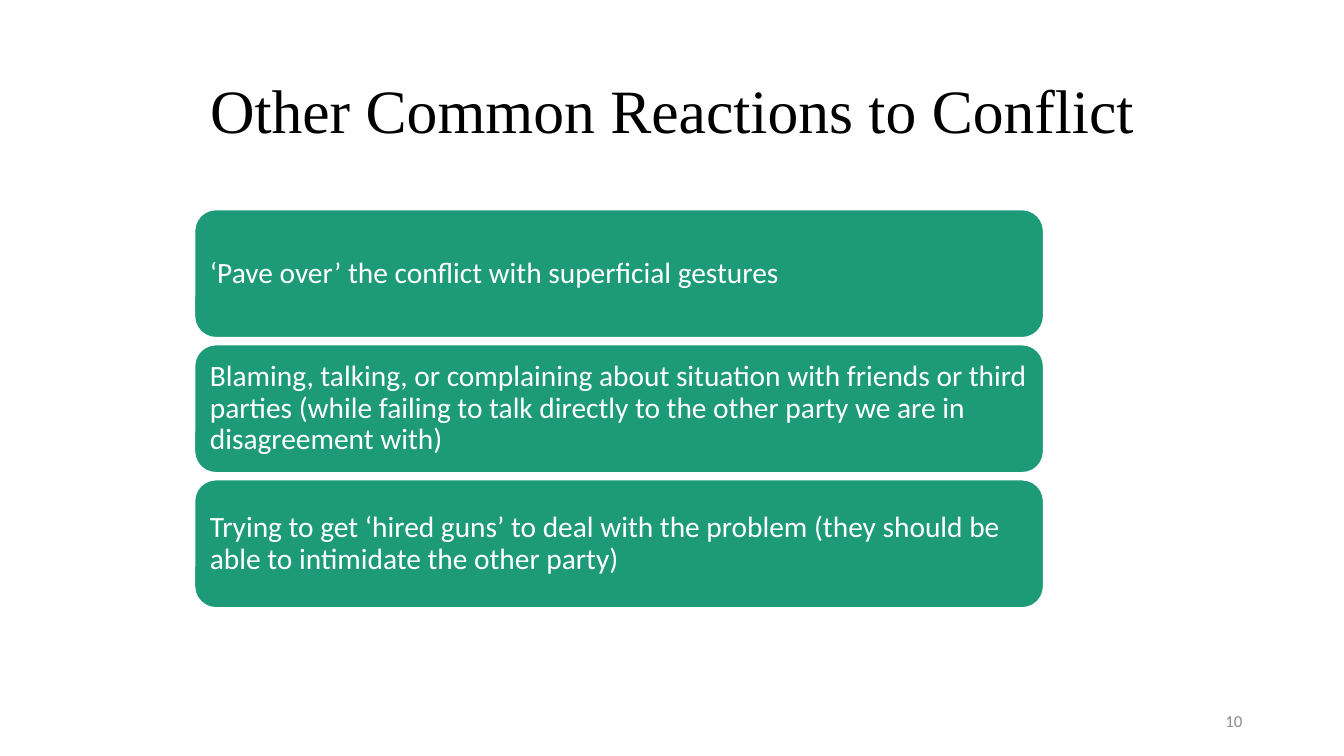
import pptx
import pptx.util
import pptx.dml.color
import pptx.enum.shapes
import pptx.enum.text

Inches, Pt = pptx.util.Inches, pptx.util.Pt
Align = pptx.enum.text.PP_ALIGN


def color(hex_code):
    return pptx.dml.color.RGBColor.from_string(hex_code)


def write(shape, text, font, size, hex_code, align, spacing=1.0):
    frame = shape.text_frame
    frame.word_wrap = True
    frame.vertical_anchor = pptx.enum.text.MSO_ANCHOR.MIDDLE
    para = frame.paragraphs[0]
    para.text = text
    para.alignment = align
    para.line_spacing = spacing
    para.font.name = font
    para.font.size = Pt(size)
    para.font.color.rgb = color(hex_code)


deck = pptx.Presentation()
deck.slide_width = Inches(13.33)
deck.slide_height = Inches(7.5)
page = deck.slides.add_slide(deck.slide_layouts[6])

# Title
title = page.shapes.add_textbox(Inches(0.92), Inches(0.4), Inches(11.5), Inches(1.45))
write(title, "Other Common Reactions to Conflict", "Times New Roman", 44, "000000",
      Align.CENTER, 0.9)

# Stack of reactions, one rounded card per row
reactions = [
    "‘Pave over’ the conflict with superficial gestures",
    "Blaming, talking, or complaining about situation with friends or third parties "
    "(while failing to talk directly to the other party we are in disagreement with)",
    "Trying to get ‘hired guns’ to deal with the problem "
    "(they should be able to intimidate the other party)",
]
stack_top, row_pitch, card_height = 2.08, 1.34, 1.27
for row, reaction in enumerate(reactions):
    card = page.shapes.add_shape(
        pptx.enum.shapes.MSO_SHAPE.ROUNDED_RECTANGLE,
        Inches(1.93), Inches(stack_top + row * row_pitch),
        Inches(8.42), Inches(card_height))
    card.shadow.inherit = False
    card.fill.solid()
    card.fill.fore_color.rgb = color("1D9A78")
    card.line.color.rgb = color("FFFFFF")
    card.line.width = Pt(1)
    card.text_frame.margin_left = card.text_frame.margin_right = Inches(0.09)
    write(card, reaction, "Calibri", 21, "FFFFFF", Align.LEFT, 0.9)

# Page number
number = page.shapes.add_textbox(Inches(9.42), Inches(6.95), Inches(3), Inches(0.4))
write(number, "10", "Calibri", 12, "8C8C8C", Align.RIGHT)

deck.save("out.pptx")
